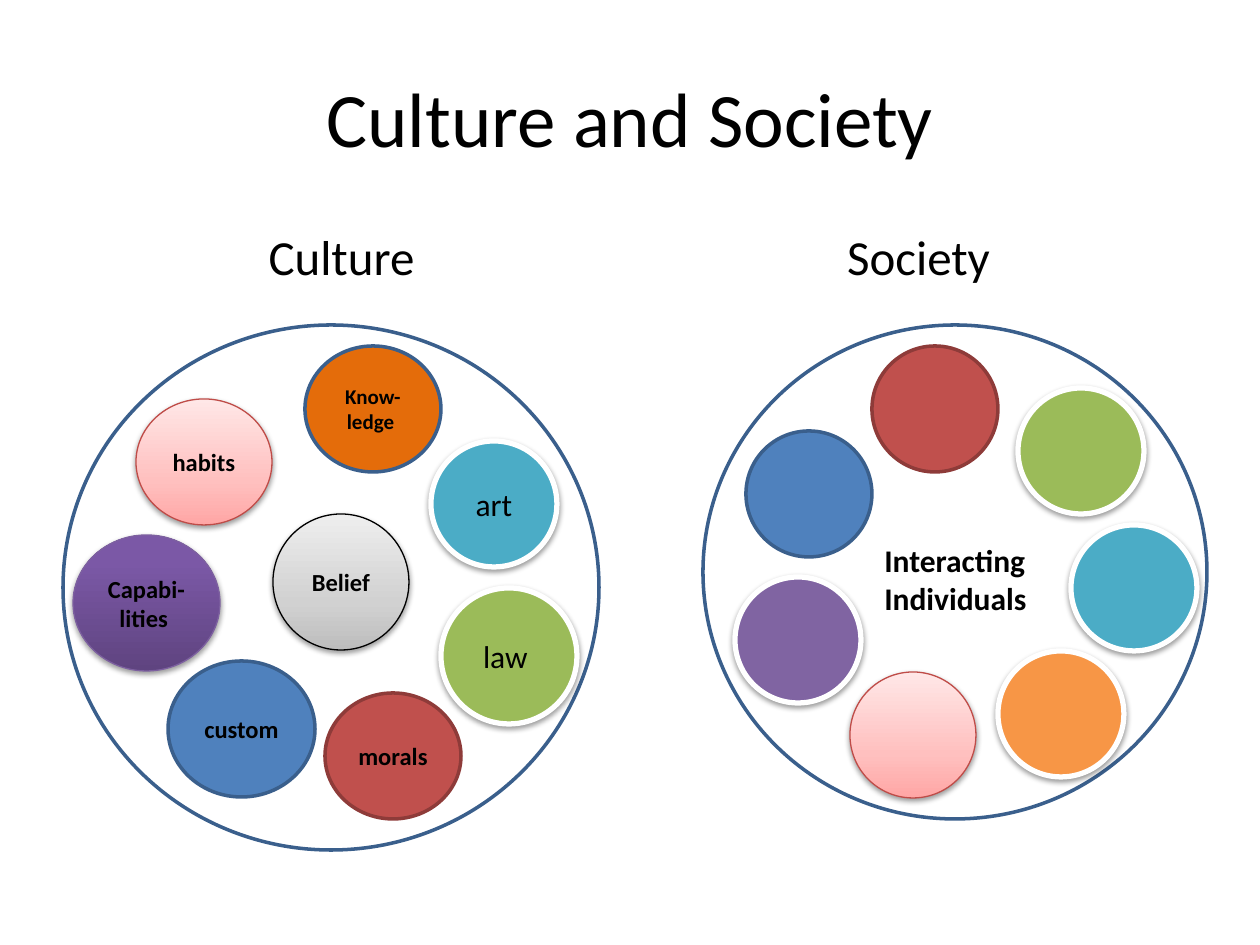
import pptx
import pptx.util
import pptx.dml.color
import pptx.enum.shapes
import pptx.enum.text
import pptx.oxml.ns
import lxml.etree

PX = 914400 / 126
FONT = "Calibri"
COLORS = {
    "black": "000000", "white": "FFFFFF", "navy": "3A5F8C", "maroon": "8E3B39",
    "blue": "4F81BD", "red": "C0504D", "green": "9BBB59", "aqua": "4BACC6",
    "purple": "8064A2", "orange": "F79646", "amber": "E46C0A",
    "rose": "BF4C48", "violet": "7D60A0",
}
GRADIENTS = {
    "gray fade": [(0, "BDBDBD"), (35, "D1D1D1"), (100, "EEEEEE")],
    "pink fade": [(0, "FFA6A5"), (35, "FFC0BF"), (100, "FFE7E7")],
    "violet fade": [(0, "5F4480"), (80, "7B58A6"), (100, "7C57A8")],
}
CULTURE = [
    ((305, 346, 136, 126), "amber", "navy", 2, ["Know-", "ledge "], 12, True),
    ((273, 514, 136, 136), "gray fade", "black", 0.75, ["Belief"], 14, True),
    ((431, 441, 126, 126), "aqua", "white", 3, ["art"], 18, False),
    ((441, 588, 136, 136), "green", "white", 3, ["law "], 18, False),
    ((136, 399, 136, 126), "pink fade", "rose", 0.75, ["habits"], 14, True),
    ((73, 535, 147, 136), "violet fade", "violet", 0.75, ["Capabi-", "lities "], 14, True),
    ((325, 693, 136, 126), "red", "maroon", 2, ["morals"], 14, True),
    ((168, 661, 147, 136), "blue", "navy", 2, ["custom"], 14, True),
]
SOCIETY = [
    (1018, 388, "green", "white", 3),
    (1071, 525, "aqua", "white", 3),
    (872, 346, "red", "maroon", 2),
    (746, 431, "blue", "navy", 2),
    (735, 577, "purple", "white", 3),
    (998, 651, "orange", "white", 3),
    (850, 672, "pink fade", "rose", 0.75),
]


def px(n):
    return pptx.util.Emu(round(n * PX))


def rgb(name):
    return pptx.dml.color.RGBColor.from_string(COLORS[name])


def add_xml(parent, tag, **attrs):
    return lxml.etree.SubElement(parent, pptx.oxml.ns.qn(tag), attrs)


def write(tf, lines, size, bold=False, align=None):
    tf.text = "\n".join(lines)
    for p in tf.paragraphs:
        p.alignment = align
        p.font.name = FONT
        p.font.size = pptx.util.Pt(size)
        p.font.bold = bold
        p.font.color.rgb = rgb("black")


def fill_placeholder(sp, box, text, size):
    sp.left, sp.top, sp.width, sp.height = map(px, box)
    write(sp.text_frame, [text], size, align=pptx.enum.text.PP_ALIGN.CENTER)


def add_heading(sp, left, text):
    fill_placeholder(sp, (left, 220, 557, 624), text, 28)
    pPr = sp.text_frame.paragraphs[0]._p.get_or_add_pPr()
    bullet = lxml.etree.Element(pptx.oxml.ns.qn("a:buNone"))
    pPr.insert(0, bullet)


def fill_gradient(sp, stops):
    sp.fill.gradient()
    sp.fill.gradient_angle = 90
    gs_list = sp._element.spPr.find(".//" + pptx.oxml.ns.qn("a:gsLst"))
    for gs in list(gs_list):
        gs_list.remove(gs)
    for position, color in stops:
        gs = add_xml(gs_list, "a:gs", pos=str(position * 1000))
        add_xml(gs, "a:srgbClr", val=color)


def add_shadow(sp):
    effects = sp._element.spPr.find(pptx.oxml.ns.qn("a:effectLst"))
    shadow = add_xml(effects, "a:outerShdw", blurRad="40000", dist="20000",
                     dir="5400000", rotWithShape="0")
    color = add_xml(shadow, "a:srgbClr", val=COLORS["black"])
    add_xml(color, "a:alpha", val="38000")


def add_circle(s, box, fill, line, width):
    sp = s.shapes.add_shape(pptx.enum.shapes.MSO_SHAPE.OVAL, *map(px, box))
    sp.shadow.inherit = False
    if fill is None:
        sp.fill.background()
    elif fill in GRADIENTS:
        fill_gradient(sp, GRADIENTS[fill])
    else:
        sp.fill.solid()
        sp.fill.fore_color.rgb = rgb(fill)
    sp.line.color.rgb = rgb(line)
    sp.line.width = pptx.util.Pt(width)
    if width != 2:
        add_shadow(sp)
    return sp


def add_labelled_circle(s, box, fill, line, width, lines, size, bold):
    sp = add_circle(s, box, fill, line, width)
    sp.text_frame.vertical_anchor = pptx.enum.text.MSO_ANCHOR.MIDDLE
    write(sp.text_frame, lines, size, bold, pptx.enum.text.PP_ALIGN.CENTER)


def add_caption(s, box, lines):
    tf = s.shapes.add_textbox(*map(px, box)).text_frame
    tf.word_wrap = False
    tf.auto_size = pptx.enum.text.MSO_AUTO_SIZE.SHAPE_TO_FIT_TEXT
    write(tf, lines, 18, True)


def main():
    prs = pptx.Presentation()
    prs.slide_width, prs.slide_height = px(1260), px(945)
    s = prs.slides.add_slide(prs.slide_layouts[3])
    title, culture, society = list(s.placeholders)[:3]
    fill_placeholder(title, (63, 38, 1134, 157), "Culture and Society", 44)
    add_heading(culture, 63, "Culture")
    add_heading(society, 640, "Society")

    add_circle(s, (63, 325, 536, 525), None, "navy", 2)
    add_circle(s, (703, 325, 504, 494), None, "navy", 2)
    for part in CULTURE:
        add_labelled_circle(s, *part)
    add_caption(s, (872, 535, 175, 89), ["Interacting", "Individuals"])
    for left, top, fill, line, width in SOCIETY:
        add_circle(s, (left, top, 126, 126), fill, line, width)
    prs.save("out.pptx")


if __name__ == "__main__":
    main()
